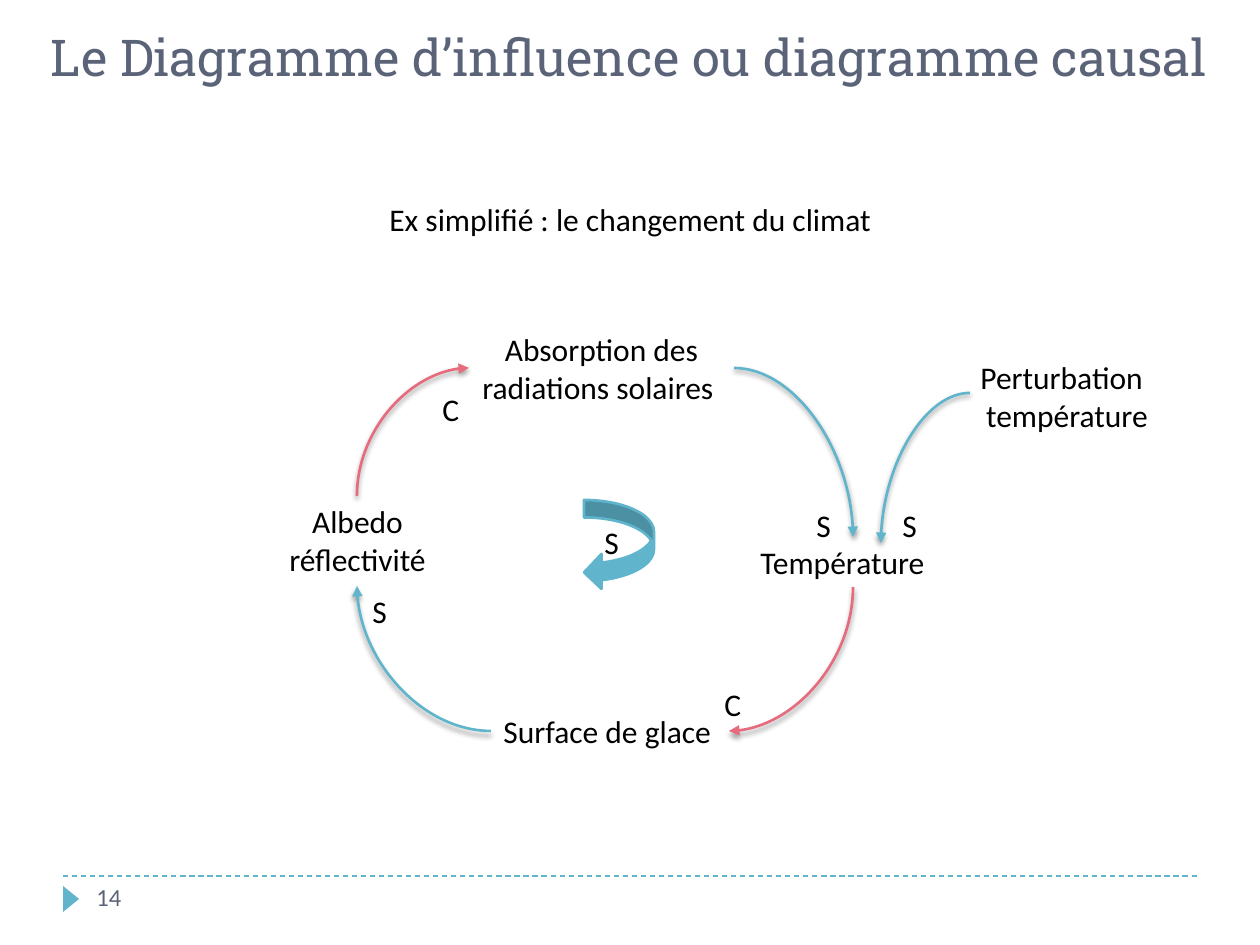
from dataclasses import dataclass

from lxml.etree import SubElement
from pptx import Presentation
from pptx.dml.color import RGBColor
from pptx.enum.dml import MSO_LINE
from pptx.enum.shapes import MSO_CONNECTOR, MSO_SHAPE
from pptx.enum.text import MSO_ANCHOR, PP_ALIGN
from pptx.oxml.ns import qn
from pptx.util import Emu, Pt

EMU_PER_PX = 914400 / 126


@dataclass(frozen=True)
class Theme:
    blue: RGBColor = RGBColor(0x60, 0xB5, 0xCC)
    red: RGBColor = RGBColor(0xE6, 0x6C, 0x7D)
    slate: RGBColor = RGBColor(0x5A, 0x63, 0x78)
    black: RGBColor = RGBColor(0, 0, 0)
    body_font: str = "Calibri"
    title_font: str = "Roboto Slab"
    title_size: int = 29
    body_size: int = 18
    number_size: int = 14
    line_width: float = 1.5


THEME = Theme()
LEFT, CENTER = PP_ALIGN.LEFT, PP_ALIGN.CENTER


def px(value):
    return Emu(round(value * EMU_PER_PX))


def add_text(page, area, lines, aligns=(LEFT,), size=THEME.body_size,
             color=THEME.black, font=THEME.body_font):
    """Add a text box with one paragraph per line."""
    box = page.shapes.add_textbox(*map(px, area))
    frame = box.text_frame
    frame.word_wrap = True
    frame.vertical_anchor = MSO_ANCHOR.TOP
    for index, (line, align) in enumerate(zip(lines, aligns)):
        para = frame.add_paragraph() if index else frame.paragraphs[0]
        para.alignment = align
        span = para.add_run()
        span.text = line
        span.font.name = font
        span.font.size = Pt(size)
        span.font.color.rgb = color


def add_shape(page, kind, area, outlined=False):
    """Add a blue preset shape."""
    shape = page.shapes.add_shape(kind, *map(px, area))
    shape.shadow.inherit = False
    shape.fill.solid()
    shape.fill.fore_color.rgb = THEME.blue
    if outlined:
        shape.line.color.rgb = THEME.blue
        shape.line.width = Pt(THEME.line_width)
    else:
        shape.line.fill.background()
    return shape


def add_line(page, kind, start, end, color, width):
    """Add a connector and its empty effect list."""
    line = page.shapes.add_connector(kind, *map(px, (*start, *end)))
    line.line.color.rgb = color
    line.line.width = Pt(width)
    effects = SubElement(line._element.spPr, qn("a:effectLst"))
    return line, effects


def add_arc(page, start, end, color, vertical_first=False):
    """Add a quarter-curve arrow; one that leaves vertically is turned by 90°."""
    begin, finish = start, end
    if vertical_first:
        middle_x, middle_y = (start[0] + end[0]) / 2, (start[1] + end[1]) / 2
        half_x, half_y = (end[1] - start[1]) / 2, (start[0] - end[0]) / 2
        begin = (middle_x - half_x, middle_y - half_y)
        finish = (middle_x + half_x, middle_y + half_y)
    arc, effects = add_line(page, MSO_CONNECTOR.CURVE, begin, finish, color,
                            THEME.line_width)
    properties = arc._element.spPr
    properties.find(qn("a:prstGeom")).set("prst", "curvedConnector2")
    if vertical_first:
        properties.find(qn("a:xfrm")).set("rot", str(90 * 60000))
    SubElement(properties.find(qn("a:ln")), qn("a:tailEnd"), type="triangle")
    # Soft shadow below the arrow
    shadow = SubElement(effects, qn("a:outerShdw"), blurRad=str(Pt(3)),
                        dist=str(Pt(2)), dir=str(90 * 60000), rotWithShape="0")
    shade = SubElement(shadow, qn("a:srgbClr"), val=str(THEME.black))
    SubElement(shade, qn("a:alpha"), val="40000")


def add_footer(page):
    rule, _ = add_line(page, MSO_CONNECTOR.STRAIGHT, (63, 876), (1197, 876),
                       THEME.blue, 0.75)
    rule.line.dash_style = MSO_LINE.DASH
    marker = add_shape(page, MSO_SHAPE.ISOSCELES_TRIANGLE, (58, 891, 26, 16))
    marker.rotation = 90
    add_text(page, (84, 876, 273, 50), ["14"], size=THEME.number_size,
             color=THEME.slate)


def add_variables(page):
    add_text(page, (469, 324, 265, 89), ["Absorption des radiations solaires "],
             [CENTER])
    add_text(page, (748, 537, 208, 50), ["Température"])
    add_text(page, (491, 706, 238, 50), ["Surface de glace"])
    add_text(page, (273, 496, 169, 89), ["Albedo", "réflectivité"],
             [CENTER, CENTER])
    add_text(page, (968, 352, 198, 89), ["Perturbation", "température"],
             [LEFT, CENTER])


def add_influences(page):
    add_arc(page, (734, 368), (853, 537), THEME.blue)
    add_arc(page, (853, 587), (729, 731), THEME.red, vertical_first=True)
    add_arc(page, (491, 731), (357, 586), THEME.blue)
    add_arc(page, (357, 496), (469, 368), THEME.red, vertical_first=True)
    add_arc(page, (970, 393), (881, 543), THEME.blue)


def add_signs(page):
    for sign, left, top in (("S", 360, 586), ("S", 890, 500), ("S", 804, 500),
                            ("C", 712, 679), ("C", 430, 384), ("S", 592, 517)):
        add_text(page, (left, top, 35, 50), [sign])


def main():
    deck = Presentation()
    deck.slide_width, deck.slide_height = px(1260), px(945)
    page = deck.slides.add_slide(deck.slide_layouts[6])

    # Headings
    add_text(page, (15, 20, 1230, 101),
             ["Le Diagramme d’influence ou diagramme causal"], [CENTER],
             THEME.title_size, THEME.slate, THEME.title_font)
    add_text(page, (377, 194, 543, 50), ["Ex simplifié : le changement du climat"])

    # Causal loop
    add_variables(page)
    add_influences(page)
    add_shape(page, MSO_SHAPE.CURVED_LEFT_ARROW, (584, 500, 70, 90), outlined=True)
    add_signs(page)

    add_footer(page)
    deck.save("out.pptx")


if __name__ == "__main__":
    main()
